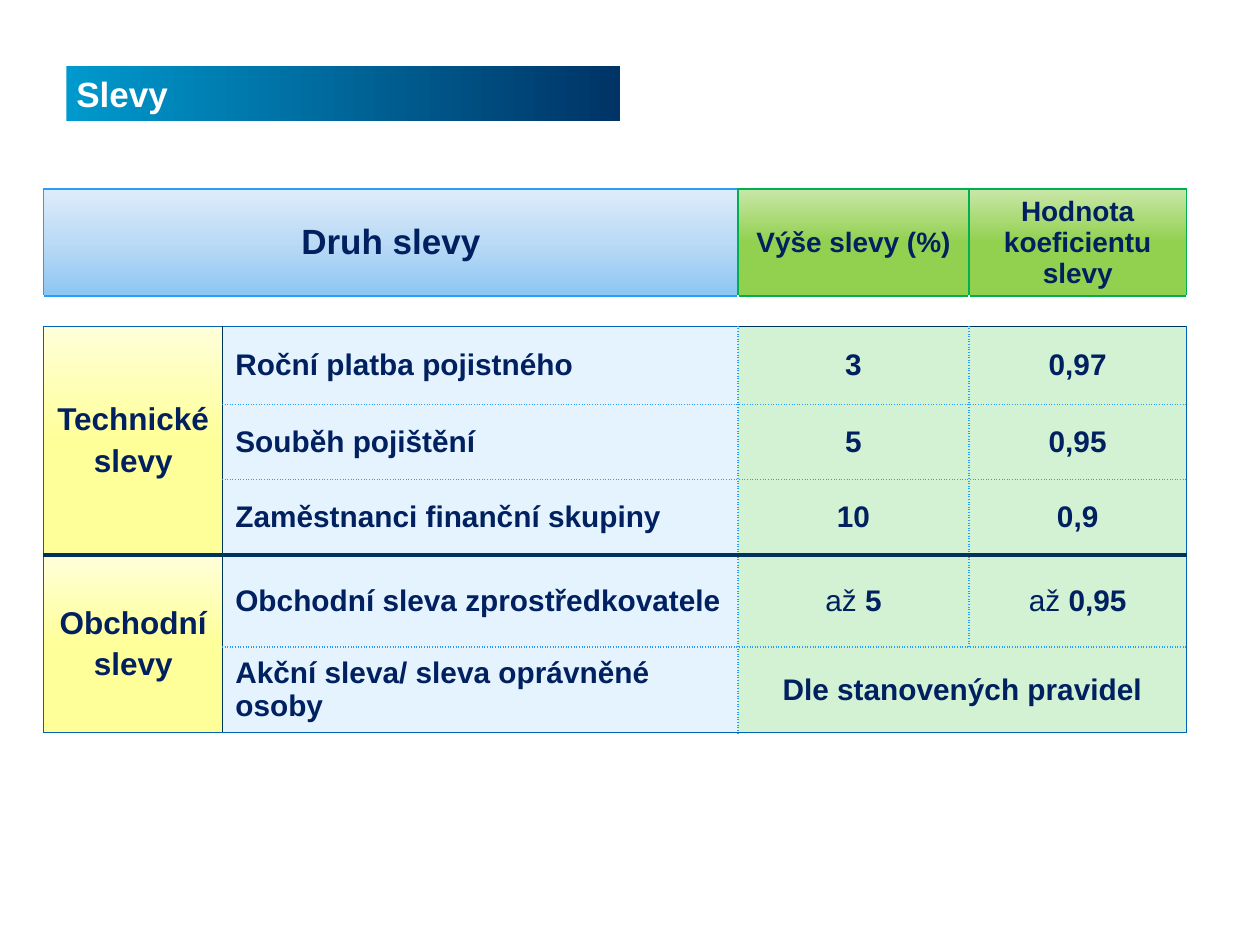
"""Build a slide with a table of insurance discounts."""
import copy

import lxml.etree
import pptx
import pptx.dml.color
import pptx.enum.shapes
import pptx.enum.text
import pptx.oxml.ns
import pptx.util

Cm, Pt = pptx.util.Cm, pptx.util.Pt
qn = pptx.oxml.ns.qn
RGBColor = pptx.dml.color.RGBColor
ALIGN = pptx.enum.text.PP_ALIGN

THEME = {
    "font": "Arial", "text": "002060", "title_text": "FFFFFF",
    "title_size": 20, "kind_size": 20, "measure_size": 16,
    "group_size": 18, "body_size": 17, "gap_size": 8,
    "title": ["0099CD", "003366"],
    "kind": ["8CC6F3", "BADAF6", "DEECFA"],
    "measure": ["92D050", "92D050", "C9E7A7"],
    "group": ["FFFF99", "FFFF99", "FFFFD9"],
    "name": "E5F3FF", "value": "D3F1D3",
}
LINES = {
    "sky": ("269DFF", 1, "solid"), "green": ("00B050", 1, "solid"),
    "white": ("FFFFFF", 1, "solid"), "blue": ("0065B9", 1, "solid"),
    "navy": ("00335C", 1, "solid"), "thick": ("00335C", 2.25, "solid"),
    "dots": ("269DFF", 1, "sysDot"),
}

TITLE = "Slevy"
ROWS = [
    ["Druh slevy", "", "Výše slevy (%)", "Hodnota koeficientu slevy"],
    ["", "", "", ""],
    ["Technické\nslevy", "Roční platba pojistného", "3", "0,97"],
    ["", "Souběh pojištění", "5", "0,95"],
    ["", "Zaměstnanci finanční skupiny", "10", "0,9"],
    ["Obchodní\nslevy", "Obchodní sleva zprostředkovatele", "až 5", "až 0,95"],
    ["", "Akční sleva/ sleva oprávněné osoby", "Dle stanovených pravidel", ""],
]
LIGHT_WORD = "až"
MERGES = [((0, 0), (0, 1)), ((1, 0), (1, 1)), ((2, 0), (4, 0)),
          ((5, 0), (6, 0)), ((6, 2), (6, 3))]
COLUMN_WIDTHS = [3.61, 10.39, 4.65, 4.39]
ROW_HEIGHTS = [2.16, 0.61, 1.57, 1.52, 1.52, 1.85, 1.73]
HORIZONTAL_LEFT = ["sky", "sky", "blue", "dots", "dots", "thick", "dots", "blue"]
HORIZONTAL_RIGHT = ["green", "green", "navy", "dots", "dots", "thick", "dots", "blue"]
VERTICAL_HEADER = ["sky", "sky", "green", "green", "green"]
VERTICAL_GAP = ["white"] * 5
VERTICAL_BODY = ["blue", "navy", "dots", "dots", "blue"]
HEADER_STYLES = ["kind", "kind", "measure", "measure"]
BODY_STYLES = ["group", "name", "value", "value"]


def paint_gradient(fill, properties, colors, angle):
    fill.gradient()
    fill.gradient_angle = angle
    stop_list = properties.find(".//" + qn("a:gsLst"))
    while len(stop_list) < len(colors):
        stop_list.append(copy.deepcopy(stop_list[0]))
    for index, (stop, color) in enumerate(zip(fill.gradient_stops, colors)):
        stop.position = index / (len(colors) - 1)
        stop.color.rgb = RGBColor.from_string(color)


def format_run(run, size, color, bold=True):
    run.font.name = THEME["font"]
    run.font.size = Pt(size)
    run.font.bold = bold
    run.font.color.rgb = RGBColor.from_string(color)


def draw_borders(cell, row, column):
    horizontal = HORIZONTAL_LEFT if column < 2 else HORIZONTAL_RIGHT
    vertical = [VERTICAL_HEADER, VERTICAL_GAP, VERTICAL_BODY][min(row, 2)]
    borders = {
        "lnL": vertical[column], "lnR": vertical[column + cell.span_width],
        "lnT": horizontal[row], "lnB": horizontal[row + cell.span_height],
    }
    properties = cell._tc.get_or_add_tcPr()
    for tag, line_name in borders.items():
        color, width, dash = LINES[line_name]
        line = lxml.etree.SubElement(properties, qn("a:" + tag), w=str(Pt(width)))
        solid = lxml.etree.SubElement(line, qn("a:solidFill"))
        lxml.etree.SubElement(solid, qn("a:srgbClr"), val=color)
        lxml.etree.SubElement(line, qn("a:prstDash"), val=dash)


def write_cell(cell, text, size, alignment):
    cell.vertical_anchor = pptx.enum.text.MSO_ANCHOR.MIDDLE
    cell.text_frame.text = text
    for index, paragraph in enumerate(cell.text_frame.paragraphs):
        paragraph.alignment = alignment
        if index:
            paragraph.space_before = Pt(size * 0.2)
        if paragraph.text.startswith(LIGHT_WORD):
            rest = paragraph.text[len(LIGHT_WORD):]
            paragraph.text = LIGHT_WORD
            paragraph.add_run().text = rest
        for run in paragraph.runs:
            format_run(run, size, THEME["text"], run.text != LIGHT_WORD)


def clear_gap_cell(cell):
    cell.margin_top = cell.margin_bottom = 0
    cell.fill.background()
    paragraph = cell.text_frame.paragraphs[0]
    lxml.etree.SubElement(paragraph._p, qn("a:endParaRPr"),
                          sz=str(THEME["gap_size"] * 100))


def add_title(slide):
    shape = slide.shapes.add_shape(pptx.enum.shapes.MSO_SHAPE.RECTANGLE,
                                   Cm(1.34), Cm(1.34), Cm(11.17), Cm(1.1))
    shape.shadow.inherit = False
    shape.line.fill.background()
    paint_gradient(shape.fill, shape._element.spPr, THEME["title"], 0)
    frame = shape.text_frame
    frame.word_wrap = True
    frame.margin_left = frame.margin_right = Cm(0.2)
    frame.vertical_anchor = pptx.enum.text.MSO_ANCHOR.MIDDLE
    frame.text = TITLE
    frame.paragraphs[0].alignment = ALIGN.LEFT
    format_run(frame.paragraphs[0].runs[0], THEME["title_size"], THEME["title_text"])


def add_discount_table(slide):
    table = slide.shapes.add_table(
        len(ROWS), len(COLUMN_WIDTHS), Cm(0.88), Cm(3.81),
        Cm(sum(COLUMN_WIDTHS)), Cm(sum(ROW_HEIGHTS))).table
    table.first_row = table.horz_banding = False
    for column, width in zip(table.columns, COLUMN_WIDTHS):
        column.width = Cm(width)
    for row, height in zip(table.rows, ROW_HEIGHTS):
        row.height = Cm(height)
    for first, last in MERGES:
        table.cell(*first).merge(table.cell(*last))
    for row, texts in enumerate(ROWS):
        for column, text in enumerate(texts):
            cell = table.cell(row, column)
            if cell.is_spanned:
                continue
            draw_borders(cell, row, column)
            if row == 1:
                clear_gap_cell(cell)
                continue
            style = (BODY_STYLES if row else HEADER_STYLES)[column]
            size = THEME.get(style + "_size", THEME["body_size"])
            write_cell(cell, text, size, ALIGN.LEFT if style == "name" else ALIGN.CENTER)
            if isinstance(THEME[style], list):
                paint_gradient(cell.fill, cell._tc.tcPr, THEME[style], 90)
            else:
                cell.fill.solid()
                cell.fill.fore_color.rgb = RGBColor.from_string(THEME[style])


def main():
    presentation = pptx.Presentation()
    presentation.slide_width, presentation.slide_height = Cm(25.4), Cm(19.05)
    slide = presentation.slides.add_slide(presentation.slide_layouts[6])
    add_discount_table(slide)
    add_title(slide)
    presentation.save("out.pptx")


if __name__ == "__main__":
    main()
